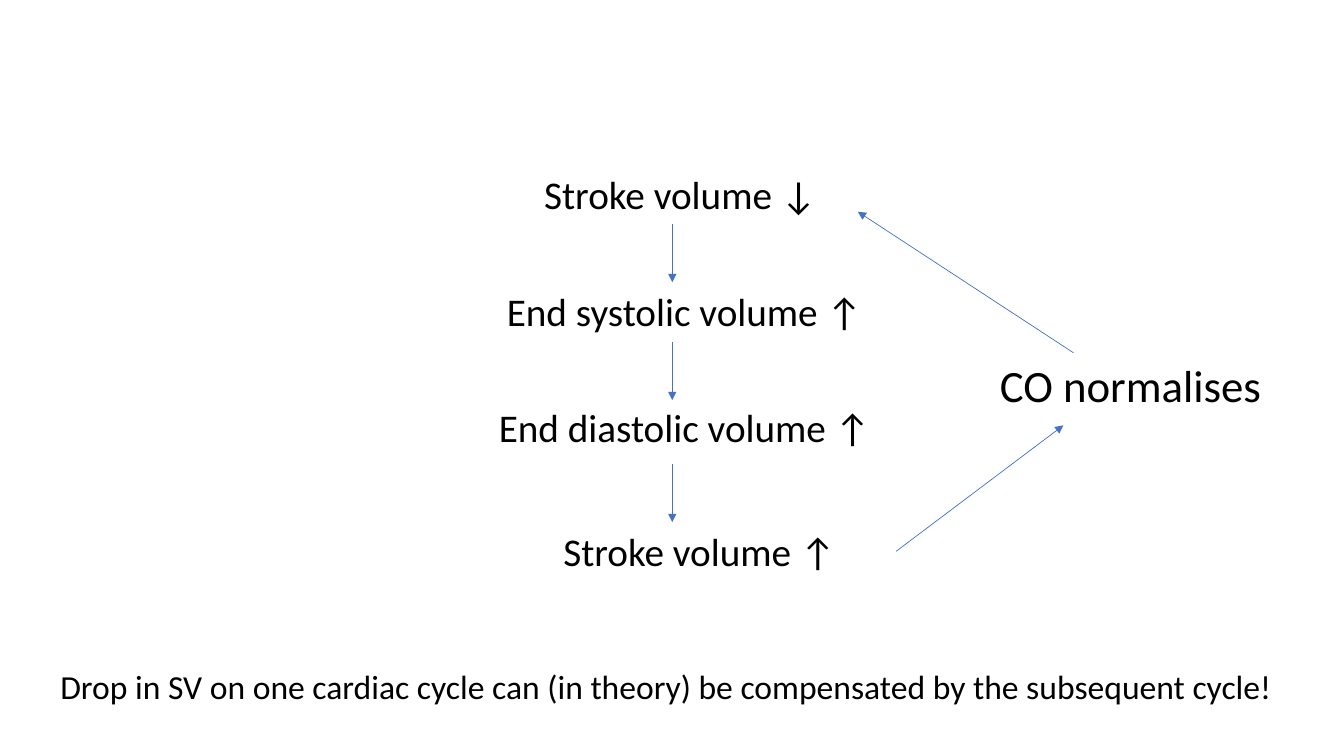
from dataclasses import dataclass

from lxml.etree import SubElement
from pptx import Presentation
from pptx.dml.color import RGBColor
from pptx.enum.shapes import MSO_CONNECTOR
from pptx.enum.text import MSO_AUTO_SIZE
from pptx.oxml.ns import qn
from pptx.util import Emu, Pt


@dataclass(frozen=True)
class Theme:
    font: str = "Calibri"
    ink: RGBColor = RGBColor(0x00, 0x00, 0x00)
    arrow: RGBColor = RGBColor(0x44, 0x72, 0xC4)
    arrow_width: float = 0.5
    step_size: int = 28
    outcome_size: int = 32
    summary_size: int = 24


class SlideBuilder:
    """Draws styled labels and arrows on one slide, measured at 100 px to the inch."""

    EMU_PER_PX = 9144

    def __init__(self, slide, theme):
        self.slide = slide
        self.theme = theme

    def px(self, *lengths):
        return [Emu(length * self.EMU_PER_PX) for length in lengths]

    def label(self, text, box, size):
        frame = self.slide.shapes.add_textbox(*self.px(*box)).text_frame
        frame.word_wrap = False
        frame.auto_size = MSO_AUTO_SIZE.SHAPE_TO_FIT_TEXT
        frame.text = text
        font = frame.paragraphs[0].runs[0].font
        font.name = self.theme.font
        font.size = Pt(size)
        font.color.rgb = self.theme.ink

    def arrow(self, start, end):
        connector = self.slide.shapes.add_connector(
            MSO_CONNECTOR.STRAIGHT, *self.px(*start, *end))
        connector.line.color.rgb = self.theme.arrow
        connector.line.width = Pt(self.theme.arrow_width)
        properties = connector._element.spPr
        SubElement(properties.find(qn("a:ln")), qn("a:tailEnd"), type="triangle")
        SubElement(properties, qn("a:effectLst"))


def main():
    presentation = Presentation()
    theme = Theme()
    presentation.slide_width, presentation.slide_height = Emu(12192000), Emu(6858000)
    slide = presentation.slides.add_slide(presentation.slide_layouts[6])
    builder = SlideBuilder(slide, theme)

    steps = [
        ("Stroke volume ↓", 530, 164, 302),
        ("End systolic volume ↑", 493, 280, 377),
        ("End diastolic volume ↑", 485, 395, 393),
        ("Stroke volume ↑", 549, 518, 302),
    ]
    for text, left, top, width in steps:
        builder.label(text, (left, top, width, 57), theme.step_size)

    chain_x, chain_length = 667, 58
    for top in (222, 339, 460):
        builder.arrow((chain_x, top), (chain_x, top + chain_length))

    builder.label("CO normalises", (982, 350, 292, 64), theme.outcome_size)
    builder.arrow((889, 547), (1055, 422))
    builder.arrow((1065, 350), (851, 210))

    builder.label(
        "Drop in SV on one cardiac cycle can (in theory) be compensated by the subsequent cycle!",
        (50, 656, 1233, 50), theme.summary_size)

    presentation.save("out.pptx")


if __name__ == "__main__":
    main()
